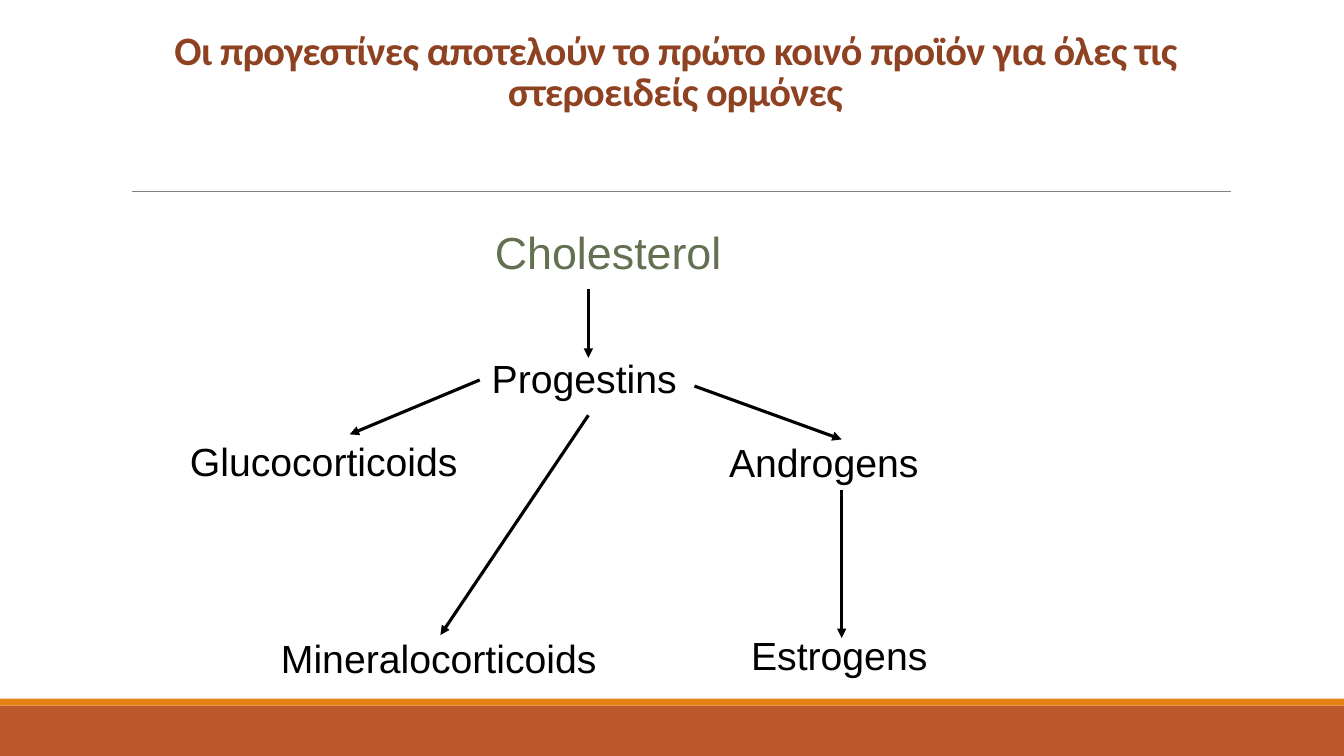
from pptx import Presentation
from pptx.dml.color import RGBColor
from pptx.enum.shapes import MSO_CONNECTOR, MSO_SHAPE
from pptx.enum.text import MSO_ANCHOR, MSO_AUTO_SIZE, PP_ALIGN
from pptx.oxml.ns import qn
from pptx.util import Pt
from lxml import etree

STRAIGHT = MSO_CONNECTOR.STRAIGHT
RECTANGLE = MSO_SHAPE.RECTANGLE
BOTTOM = MSO_ANCHOR.BOTTOM
FIT_SHAPE = MSO_AUTO_SIZE.SHAPE_TO_FIT_TEXT
CENTER = PP_ALIGN.CENTER

RUST = RGBColor(0xBD, 0x58, 0x2C)
ORANGE = RGBColor(0xE4, 0x83, 0x12)
BROWN = RGBColor(0x8E, 0x42, 0x21)
OLIVE = RGBColor(0x63, 0x70, 0x52)
GRAY = RGBColor(0x80, 0x80, 0x80)
BLACK = RGBColor(0, 0, 0)

deck = Presentation()
deck.slide_width, deck.slide_height = Pt(960), Pt(540)
page = deck.slides.add_slide(deck.slide_layouts[6])


def add_text(text, left, top, width, height, font_name, size, color):
    box = page.shapes.add_textbox(Pt(left), Pt(top), Pt(width), Pt(height))
    para = box.text_frame.paragraphs[0]
    para.text = text
    para.alignment = CENTER
    para.font.name = font_name
    para.font.size = Pt(size)
    para.font.color.rgb = color
    return box.text_frame


def add_line(x1, y1, x2, y2, color, width):
    line = page.shapes.add_connector(STRAIGHT, Pt(x1), Pt(y1), Pt(x2), Pt(y2))
    line.line.color.rgb = color
    line.line.width = Pt(width)
    properties = line._element.spPr
    etree.SubElement(properties, qn("a:effectLst"))
    return properties.find(qn("a:ln"))


# Footer bands and the rule under the title
for top, height, color in [(504, 36, RUST), (499, 5, ORANGE)]:
    band = page.shapes.add_shape(RECTANGLE, 0, Pt(top), Pt(960), Pt(height))
    band.shadow.inherit = False
    band.fill.solid()
    band.fill.fore_color.rgb = color
    band.line.fill.background()
add_line(94.3, 136.6, 879, 136.6, GRAY, 0.5)

# Title
title = add_text(
    "Οι προγεστίνες αποτελούν το πρώτο κοινό προϊόν για όλες τις στεροειδείς ορμόνες",
    86.4, 22.3, 792, 63.4, "Calibri", 28.8, BROWN)
title.word_wrap = True
title.vertical_anchor = BOTTOM
title_para = title.paragraphs[0]
title_para.line_spacing = 0.85
title_para.font.bold = True
title_para.runs[0]._r.get_or_add_rPr().set("spc", "-50")

# Hormone names: text, left, top, width, height, size, color, wrap
hormones = [
    ("Cholesterol ", 342, 157, 185, 45.4, 32, OLIVE, False),
    ("Progestins ", 342, 249.8, 158.4, 41, 28, BLACK, True),
    ("Glucocorticoids ", 128.2, 308.9, 213.8, 41, 28, BLACK, False),
    ("Androgens ", 513.4, 309.6, 157.7, 41, 28, BLACK, False),
    ("Mineralocorticoids ", 193, 449.3, 248.4, 41, 28, BLACK, False),
    ("Estrogens ", 529.2, 447.1, 148.3, 41, 28, BLACK, False),
]
for name, left, top, width, height, size, color, wrap in hormones:
    label = add_text(name, left, top, width, height, "Arial", size, color)
    label.word_wrap = wrap
    label.auto_size = FIT_SHAPE

# Pathway arrows: start x, start y, end x, end y
arrows = [
    (420.3, 206.6, 420.3, 255.6),
    (342.7, 271.4, 249.8, 310.3),
    (496.1, 275.8, 601.2, 313.9),
    (420.3, 296.6, 314.6, 453.6),
    (601.2, 349.9, 601.2, 455.8),
]
for ends in arrows:
    outline = add_line(*ends, BLACK, 2.25)
    etree.SubElement(outline, qn("a:tailEnd"), type="triangle")

deck.save("out.pptx")
